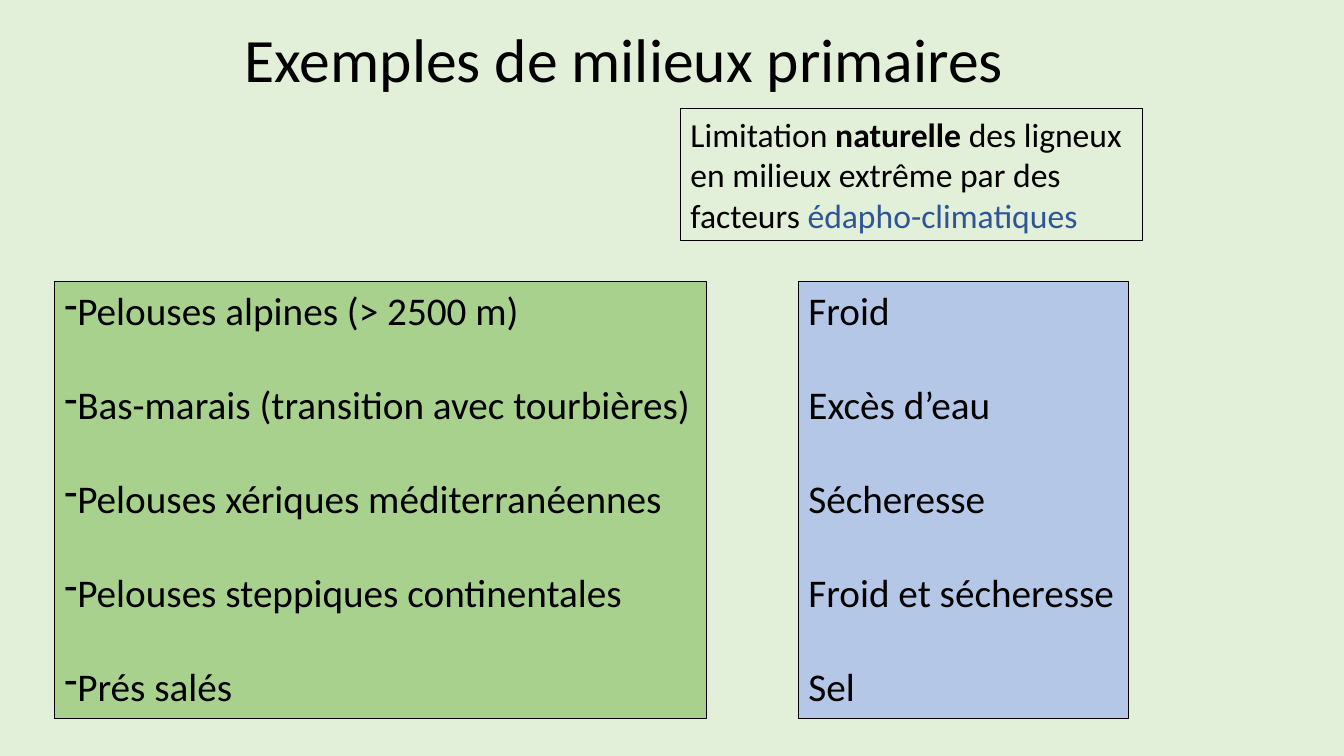
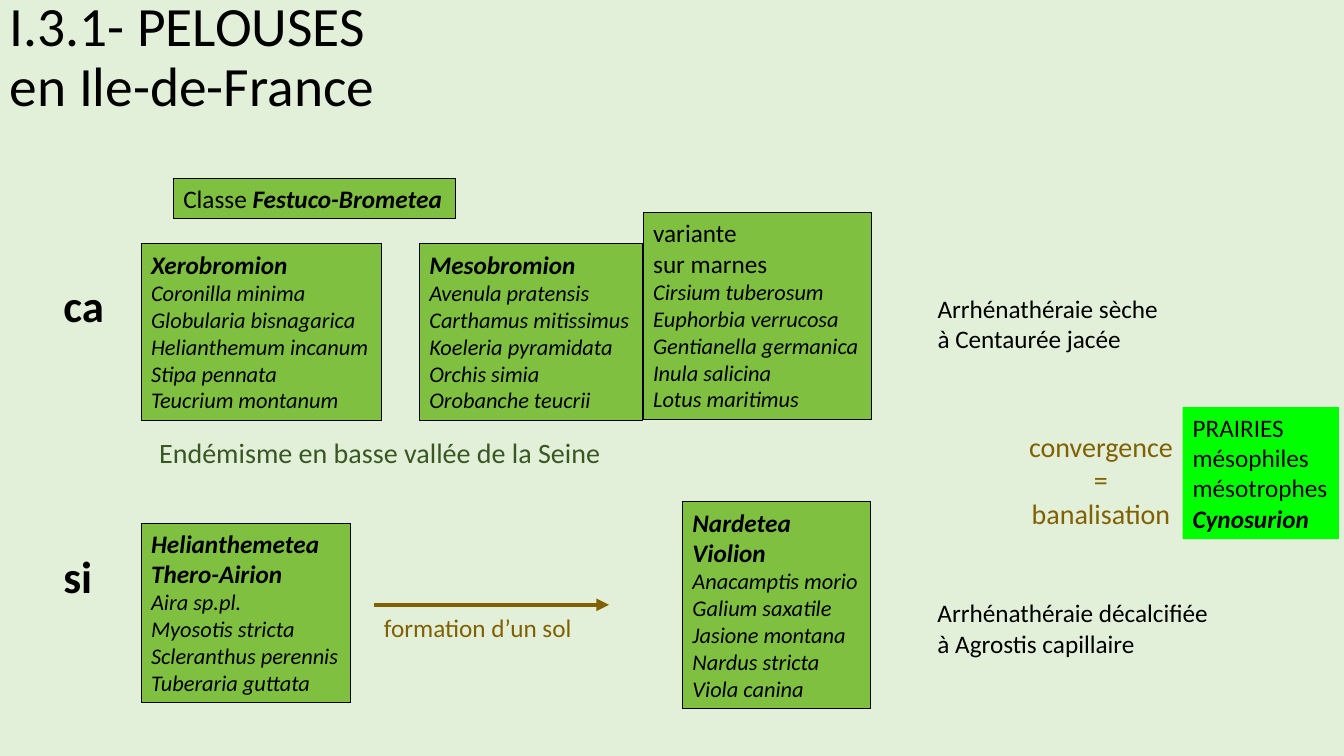
from lxml.etree import SubElement as Sub
from pptx import Presentation
from pptx.dml.color import RGBColor
from pptx.enum.shapes import MSO_CONNECTOR as Conn, MSO_SHAPE as Shape
from pptx.enum.text import MSO_ANCHOR as Anchor, MSO_AUTO_SIZE as Auto, PP_ALIGN as Align
from pptx.oxml.ns import qn
from pptx.util import Inches, Pt

# Shared look
FONT = "Calibri"
BLACK, PALE, GRASS = "000000", "E2F0D9", "80C040"
GREEN, BLUE, LIME = "A9D18E", "B4C7E7", "00FF00"
BROWN, FOREST, NAVY = "806000", "385723", "2F5597"


def rgb(code):
    return RGBColor.from_string(code)


def style(run, size, ink=BLACK, bold=False, slant=False):
    font = run.font
    font.name, font.size = FONT, Pt(size)
    font.bold, font.italic = bold, slant
    font.color.rgb = rgb(ink)


def page(deck):
    slide = deck.slides.add_slide(deck.slide_layouts[6])
    slide.background.fill.solid()
    slide.background.fill.fore_color.rgb = rgb(PALE)
    return slide


def fill_text(shape, lines, size, ink=BLACK, wrap=False, align=Align.LEFT, gap=0):
    """Each line is a string or a list of (text, run style) pairs."""
    frame = shape.text_frame
    frame.word_wrap = wrap
    frame.auto_size = Auto.SHAPE_TO_FIT_TEXT
    frame.vertical_anchor = Anchor.TOP
    for n, line in enumerate(lines):
        para = frame.add_paragraph() if n else frame.paragraphs[0]
        para.alignment = align
        para.space_before = Pt(gap if n else 0)
        for text, look in [(line, {})] if isinstance(line, str) else line:
            run = para.add_run()
            run.text = text
            style(run, **{"size": size, "ink": ink, **look})


def label(slide, box, lines, size, **opts):
    shape = slide.shapes.add_textbox(*map(Inches, box))
    fill_text(shape, lines, size, **opts)


def panel(slide, box, lines, size, fill=None, edge=BLACK, **opts):
    shape = slide.shapes.add_shape(Shape.RECTANGLE, *map(Inches, box))
    shape.shadow.inherit = False
    if fill:
        shape.fill.solid()
        shape.fill.fore_color.rgb = rgb(fill)
    else:
        shape.fill.background()
    if edge:
        shape.line.color.rgb = rgb(edge)
        shape.line.width = Pt(0.75)
    else:
        shape.line.fill.background()
    fill_text(shape, lines, size, **opts)
    return shape


def title(slide, box, text, size):
    frame = slide.shapes.add_textbox(*map(Inches, box)).text_frame
    frame.word_wrap = True
    frame.vertical_anchor = Anchor.MIDDLE
    frame.text = text
    para = frame.paragraphs[0]
    para.line_spacing = 0.9
    for run in para.runs:
        style(run, size)


def dash(shape):
    for para in shape.text_frame.paragraphs:
        props = para._p.get_or_add_pPr()
        props.set("marL", "0")
        props.set("indent", "0")
        Sub(props, qn("a:buFontTx"))
        Sub(props, qn("a:buChar")).set("char", "-")


def plants(slide, box, heads, names, bold=True):
    """Group names at 18 pt above species in 16 pt italics."""
    lines = [[(head, {"bold": bold, "slant": bold})] for head in heads]
    lines += [[(name, {"size": 16, "slant": True})] for name in names]
    panel(slide, box, lines, 18, GRASS)


def arrow(slide, start, end, ink, width):
    link = slide.shapes.add_connector(Conn.STRAIGHT, *map(Inches, start + end))
    link.line.color.rgb = rgb(ink)
    link.line.width = Pt(width)
    Sub(link.line._get_or_add_ln(), qn("a:tailEnd")).set("type", "triangle")
    Sub(link._element.spPr, qn("a:effectLst"))


def primary(deck):
    slide = page(deck)
    title(slide, (2.33, 0, 8.5, 1.25), "Exemples de milieux primaires", 44)

    # Habitats and their limiting factors, row by row
    rows = [
        ("Pelouses alpines (> 2500 m)", "Froid"),
        ("Bas-marais (transition avec tourbières)", "Excès d’eau"),
        ("Pelouses xériques méditerranéennes", "Sécheresse"),
        ("Pelouses steppiques continentales", "Froid et sécheresse"),
        ("Prés salés", "Sel"),
    ]
    sites, limits = zip(*rows)
    top, tall, gap = 2.79, 4.34, 33.5
    dash(panel(slide, (0.54, top, 6.47, tall), sites, 28, GREEN, gap=gap))
    panel(slide, (7.92, top, 3.27, tall), limits, 28, BLUE, gap=gap)

    # Definition
    note = [
        ("Limitation", {}),
        (" naturelle", {"bold": True}),
        (" des ligneux en milieux extrême par des facteurs ", {}),
        ("édapho-climatiques", {"ink": NAVY}),
    ]
    panel(slide, (6.75, 1.08, 4.58, 1.31), [note], 24, wrap=True)


def lawns(deck):
    slide = page(deck)
    title(slide, (0, 0, 8.5, 1.17), "I.3.1- PELOUSES\ven Ile-de-France", 39.6)
    strong = {"bold": True, "slant": True}

    # Soil types
    for top, wide, soil in [(2.71, 0.62, "ca"), (5.39, 0.5, "si")]:
        label(slide, (0.53, top, wide, 0.63), [[(soil, {"bold": True})]], 32)

    # Limestone row
    panel(slide, (1.72, 1.77, 2.8, 0.4),
          [[("Classe ", {}), ("Festuco-Brometea", strong)]], 18, GRASS)
    plants(slide, (4.16, 2.42, 2.21, 1.75), ["Mesobromion"],
           ["Avenula pratensis", "Carthamus mitissimus", "Koeleria pyramidata",
            "Orchis simia", "Orobanche teucrii"])
    plants(slide, (1.4, 2.42, 2.38, 1.75), ["Xerobromion"],
           ["Coronilla minima", "Globularia bisnagarica", "Helianthemum incanum",
            "Stipa pennata", "Teucrium montanum"])
    plants(slide, (6.38, 2.11, 2.26, 2.05), ["variante", "sur marnes"],
           ["Cirsium tuberosum", "Euphorbia verrucosa", "Gentianella germanica",
            "Inula salicina", "Lotus maritimus"], bold=False)
    label(slide, (1.48, 4.27, 4.62, 0.44),
          ["Endémisme en basse vallée de la Seine"], 20, ink=FOREST)

    # Silica row
    plants(slide, (1.4, 5.19, 2.08, 1.78), ["Helianthemetea", "Thero-Airion"],
           ["Aira sp.pl.", "Myosotis stricta", "Scleranthus perennis",
            "Tuberaria guttata"])
    plants(slide, (6.77, 4.98, 1.86, 2.05), ["Nardetea", "Violion"],
           ["Anacamptis morio", "Galium saxatile", "Jasione montana",
            "Nardus stricta", "Viola canina"])
    arrow(slide, (3.71, 6), (6.04, 6), BROWN, 3)
    label(slide, (3.71, 6.03, 2.09, 0.4), ["formation d’un sol"], 18, ink=BROWN)

    # Convergence towards meadows
    meadows = [
        (2.86, 2.45, "Arrhénathéraie sèche à Centaurée jacée"),
        (5.88, 3.04, "Arrhénathéraie décalcifiée à Agrostis capillaire"),
    ]
    for top, wide, text in meadows:
        label(slide, (9.2, top, wide, 0.71), [text], 18, wrap=True)
    label(slide, (10.1, 4.21, 1.64, 1.11), ["convergence", "=", "banalisation"],
          20, ink=BROWN, align=Align.CENTER)
    panel(slide, (11.73, 4.04, 1.55, 1.31),
          ["PRAIRIES", "mésophiles", "mésotrophes", [("Cynosurion", strong)]],
          18, LIME, edge=None)


def main():
    deck = Presentation()
    deck.slide_width, deck.slide_height = Inches(13.33), Inches(7.5)
    primary(deck)
    lawns(deck)
    deck.save("out.pptx")


if __name__ == "__main__":
    main()
